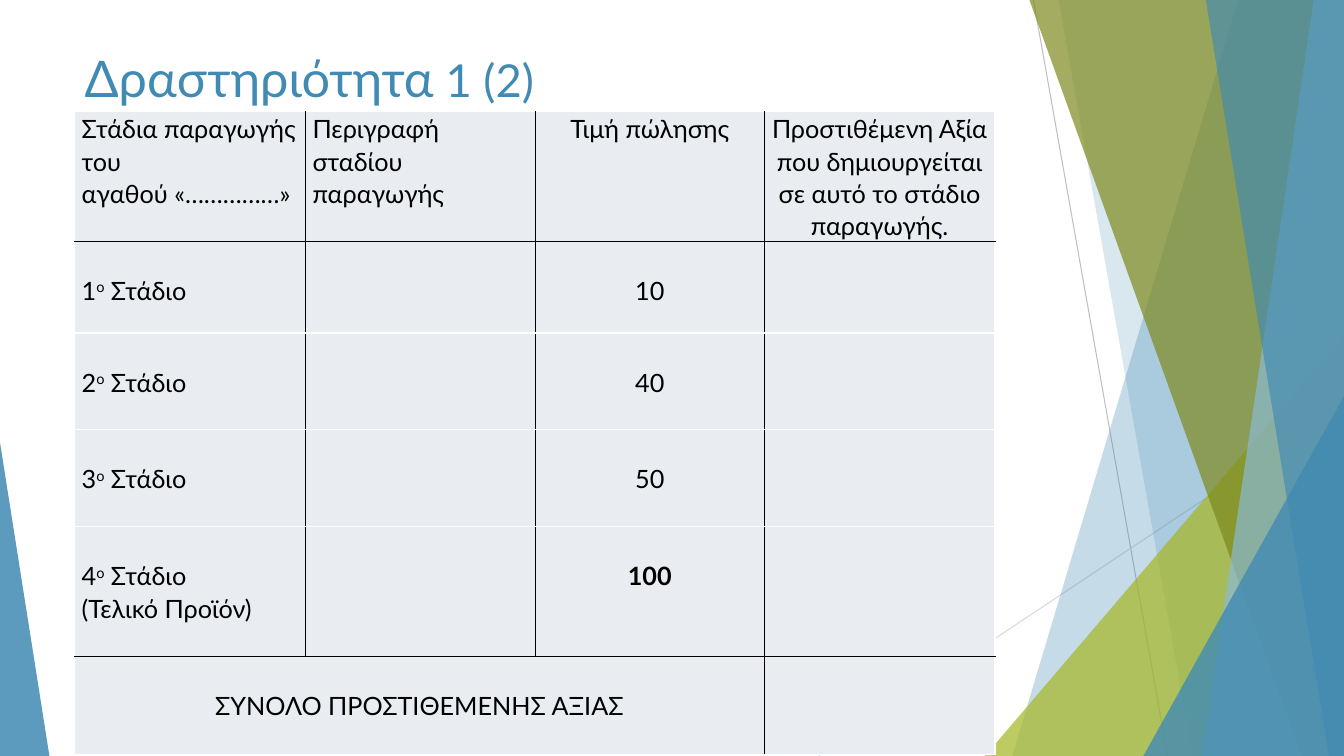
from pptx import Presentation
from pptx.dml.color import RGBColor
from pptx.enum.shapes import MSO_CONNECTOR, MSO_SHAPE
from pptx.enum.text import PP_ALIGN
from pptx.oxml.ns import qn
from pptx.util import Inches, Pt
from lxml.etree import SubElement

COLORS = {
    "blue": "418AB3", "sky": "8ABAD4", "lime": "A6B727", "olive": "7D891D",
    "grey": "BFBFBF", "pale": "D9D9D9", "cell": "E9EDF2",
    "black": "000000", "white": "FFFFFF",
}
LINE_HEIGHT = 0.32


class ActivityPage:
    """Draws styled elements on one slide."""

    def __init__(self, deck, font="Lato"):
        self.page = deck.slides.add_slide(deck.slide_layouts[6])
        self.font = font

    def color(self, name):
        return RGBColor.from_string(COLORS[name])

    def style(self, span, size, color="black", bold=False):
        span.font.name = self.font
        span.font.size = Pt(size)
        span.font.bold = bold
        span.font.color.rgb = self.color(color)

    def paint(self, shape, color, opacity):
        shape.shadow.inherit = False
        shape.line.fill.background()
        shape.fill.solid()
        shape.fill.fore_color.rgb = self.color(color)
        tint = shape.fill._xPr.find(qn("a:solidFill"))[0]
        SubElement(tint, qn("a:alpha"), val=str(opacity * 1000))

    def line(self, start, end, color):
        ends = [Inches(value) for value in (*start, *end)]
        connector = self.page.shapes.add_connector(MSO_CONNECTOR.STRAIGHT, *ends)
        connector.line.color.rgb = self.color(color)
        connector.line.width = Pt(0.75)
        SubElement(connector._element.spPr, qn("a:effectLst"))

    def ribbon(self, top, bottom, color, opacity):
        corners = [(top, 0), (13.33, 0), (13.33, 7.5), (bottom, 7.5)]
        points = [(Inches(x), Inches(y)) for x, y in corners]
        builder = self.page.shapes.build_freeform(*points[0])
        builder.add_line_segments(points[1:], close=True)
        self.paint(builder.convert_to_shape(), color, opacity)

    def triangle(self, left, top, width, apex, color, opacity):
        shape = self.page.shapes.add_shape(
            MSO_SHAPE.ISOSCELES_TRIANGLE,
            Inches(left), Inches(top), Inches(width), Inches(7.5 - top))
        shape.adjustments[0] = apex
        self.paint(shape, color, opacity)

    def title(self, parts):
        box = self.page.shapes.add_textbox(
            Inches(0.74), Inches(0.42), Inches(9.4), Inches(0.69))
        box.text_frame.word_wrap = True
        para = box.text_frame.paragraphs[0]
        for text, size in parts:
            span = para.add_run()
            span.text = text
            self.style(span, size, "blue")

    def borders(self, cell, **sides):
        properties = cell._tc.get_or_add_tcPr()
        for side, color in sides.items():
            edge = SubElement(properties, qn(f"a:ln{side}"), w=str(Pt(1)))
            fill = SubElement(edge, qn("a:solidFill"))
            SubElement(fill, qn("a:srgbClr"), val=COLORS[color])

    def table(self, left, top, widths, heights):
        frame = self.page.shapes.add_table(
            len(heights), len(widths), Inches(left), Inches(top),
            Inches(sum(widths)), Inches(sum(heights)))
        table = frame.table
        table.first_row = table.horz_banding = False
        for column, width in zip(table.columns, widths):
            column.width = Inches(width)
        for row, height in zip(table.rows, heights):
            row.height = Inches(height)
        last_row, last_column = len(heights) - 1, len(widths) - 1
        table.cell(last_row, 0).merge(table.cell(last_row, last_column - 1))
        for r in range(len(heights)):
            for c in range(len(widths)):
                cell = table.cell(r, c)
                if cell.is_spanned:
                    continue
                self.borders(
                    cell,
                    L="black" if c else "white",
                    R="white" if c == last_column else "black",
                    T="black" if r in (1, last_row) else "white",
                    B="black" if r in (0, last_row - 1) else "white")
                cell.fill.solid()
                cell.fill.fore_color.rgb = self.color("cell")
                cell.margin_left = cell.margin_right = Inches(0.07)
                cell.margin_top = Inches(LINE_HEIGHT if r else 0)
                cell.margin_bottom = 0
        return table

    def cell_text(self, cell, text, centered=False, bold=False):
        cell.text_frame.text = text
        for para in cell.text_frame.paragraphs:
            para.line_spacing = 1.07
            para.alignment = PP_ALIGN.CENTER if centered else PP_ALIGN.LEFT
            for span in para.runs:
                self.style(span, 18, bold=bold)

    def stage(self, cell, number, note):
        self.cell_text(cell, str(number))
        para = cell.text_frame.paragraphs[0]
        for text in ("ο", " Στάδιο"):
            span = para.add_run()
            span.text = text
            self.style(span, 18)
        para.runs[1]._r.get_or_add_rPr().set("baseline", "30000")
        if note:
            para.add_line_break()
            span = para.add_run()
            span.text = note
            self.style(span, 18)


def main():
    deck = Presentation()
    deck.slide_width, deck.slide_height = Inches(13.33), Inches(7.5)
    activity = ActivityPage(deck)

    activity.line((10.25, 0), (11.58, 7.5), "grey")
    activity.line((13.33, 4.03), (8.12, 7.5), "pale")
    activity.ribbon(12.28, 10.04, "blue", 30)
    activity.ribbon(10.5, 11.83, "blue", 20)
    activity.triangle(9.77, 3.33, 3.56, 1, "lime", 72)
    activity.ribbon(10.21, 12.91, "olive", 70)
    activity.ribbon(13.03, 11.92, "sky", 70)
    activity.ribbon(11.96, 13.18, "blue", 65)
    activity.triangle(11.34, 3.93, 1.99, 1, "blue", 80)
    activity.triangle(0, 4.39, 0.49, 0, "blue", 85)

    activity.title([("Δραστηριότητα", 36), (" 1 (2)", 32.4)])

    table = activity.table(
        0.74, 1.11, [2.29, 2.28, 2.27, 2.29], [1.28, 0.91, 0.96, 0.96, 1.29, 0.97])
    headings = [
        "Στάδια παραγωγής του\nαγαθού «……………»",
        "Περιγραφή σταδίου παραγωγής",
        "Τιμή πώλησης",
        "Προστιθέμενη Αξία που δημιουργείται σε αυτό το στάδιο παραγωγής.",
    ]
    for column, heading in enumerate(headings):
        activity.cell_text(table.cell(0, column), heading, centered=column > 1)
    stages = [("10", ""), ("40", ""), ("50", ""), ("100", "(Τελικό Προϊόν)")]
    for number, (price, note) in enumerate(stages, 1):
        activity.stage(table.cell(number, 0), number, note)
        activity.cell_text(
            table.cell(number, 2), price, centered=True, bold=number == len(stages))
    activity.cell_text(table.cell(5, 0), "ΣΥΝΟΛΟ ΠΡΟΣΤΙΘΕΜΕΝΗΣ ΑΞΙΑΣ", centered=True)

    deck.save("out.pptx")


if __name__ == "__main__":
    main()
